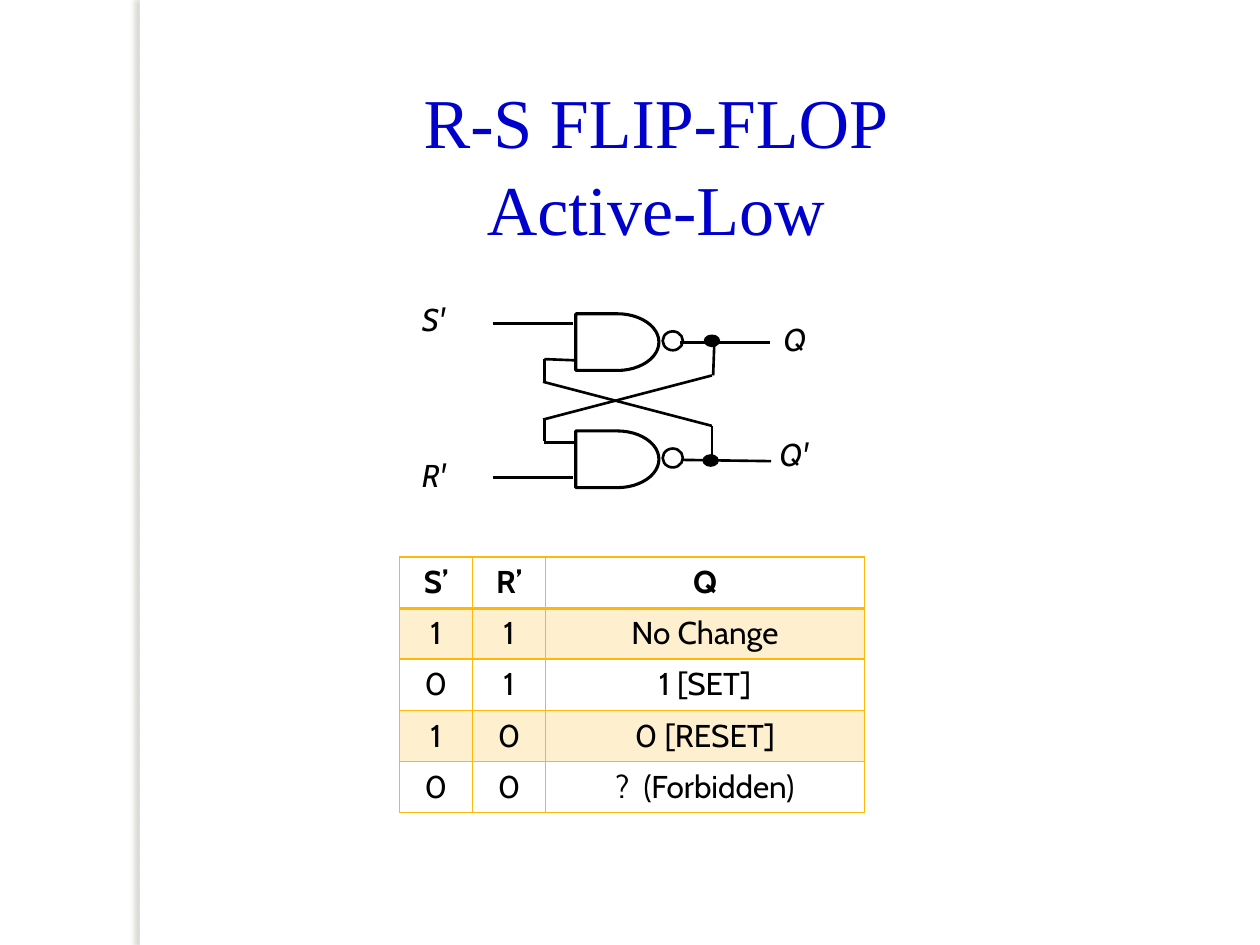
from typing import NamedTuple

from lxml import etree
from pptx import Presentation
from pptx.dml.color import RGBColor
from pptx.enum.shapes import MSO_CONNECTOR, MSO_SHAPE
from pptx.enum.text import MSO_ANCHOR, PP_ALIGN
from pptx.oxml.ns import qn
from pptx.util import Inches, Pt

LINE = MSO_CONNECTOR.STRAIGHT
RECT, OVAL, GATE = MSO_SHAPE.RECTANGLE, MSO_SHAPE.OVAL, MSO_SHAPE.FLOWCHART_DELAY
MID, LOW = PP_ALIGN.CENTER, MSO_ANCHOR.BOTTOM
TALL = 750
WIDE = 1000
CELL = Inches(10) // WIDE
INK = {"black": "000000", "white": "FFFFFF", "blue": "0000CC",
       "gold": "FEB80A", "shade": "736F63"}
SANS, SERIF = "Cabin", "Times New Roman"


class Wire(NamedTuple):
    x1: int
    y1: int
    x2: int
    y2: int


class Part(NamedTuple):
    kind: int
    left: int
    top: int
    wide: int
    tall: int
    line: float = 0
    fill: str = ""


class Label(NamedTuple):
    text: str
    left: int
    top: int
    wide: int


WIRES = [
    Wire(391, 257, 455, 257), Wire(391, 379, 455, 379),
    Wire(432, 285, 457, 286), Wire(432, 351, 457, 351),
    Wire(432, 285, 432, 304), Wire(432, 332, 432, 350),
    Wire(540, 272, 611, 272), Wire(542, 365, 612, 366),
    Wire(565, 338, 565, 367), Wire(567, 271, 566, 298),
    Wire(431, 303, 565, 338), Wire(565, 298, 431, 333),
]
DOTS = [Part(OVAL, 558, 361, 12, 9, 0.75, "black"),
        Part(OVAL, 559, 266, 12, 9, 0.75, "black")]
LABELS = [Label("S'", 325, 233, 70), Label("R'", 325, 357, 71),
          Label("Q", 612, 249, 59), Label("Q'", 609, 340, 74)]
GATES = [249, 342]
ROWS = [("S’", "R’", "Q"), ("1", "1", "No Change"), ("0", "1", "1 [SET]"),
        ("1", "0", "0 [RESET]"), ("0", "0", "?  (Forbidden)")]
COLS = [58, 58, 253]
STEP = 40.6


def size(*cells: float) -> list[int]:
    return [round(n * CELL) for n in cells]


def tint(name: str) -> RGBColor:
    return RGBColor.from_string(INK[name])


def style(para, face: str, points: int, ink: str, bold=False, slant=False) -> None:
    for run in para.runs:
        font = run.font
        font.name, font.size = face, Pt(points)
        font.bold, font.italic = bold, slant
        font.color.rgb = tint(ink)


def draw_wire(slide, wire: Wire) -> None:
    link = slide.shapes.add_connector(LINE, *size(*wire))
    link.line.color.rgb = tint("black")
    link.line.width = Pt(1.5)
    etree.SubElement(link._element.spPr, qn("a:effectLst"))


def draw_part(slide, part: Part):
    shape = slide.shapes.add_shape(part.kind, *size(*part[1:5]))
    shape.shadow.inherit = False
    if part.fill:
        shape.fill.solid()
        shape.fill.fore_color.rgb = tint(part.fill)
    else:
        shape.fill.background()
    if part.line:
        shape.line.color.rgb = tint("black")
        shape.line.width = Pt(part.line)
    else:
        shape.line.fill.background()
    return shape


def draw_strip(slide) -> None:
    strip = draw_part(slide, Part(RECT, 111, 0, 8, TALL, fill="white"))
    glow = etree.SubElement(
        strip._element.spPr.find(qn("a:effectLst")), qn("a:outerShdw"),
        blurRad=str(Pt(3)), dist=str(Pt(3)), dir="10800000",
        algn="ctr", rotWithShape="0")
    hue = etree.SubElement(glow, qn("a:srgbClr"), val=INK["shade"])
    etree.SubElement(hue, qn("a:alpha"), val="25000")


def draw_title(slide) -> None:
    frame = slide.shapes.add_textbox(*size(324, 58, 393, 145)).text_frame
    frame.word_wrap = False
    frame.vertical_anchor = LOW
    frame.text = "R-S FLIP-FLOP\nActive-Low"
    for para in frame.paragraphs:
        para.alignment = MID
        para.line_spacing = 1.04
        style(para, SERIF, 40, "blue")


def draw_label(slide, label: Label) -> None:
    box = slide.shapes.add_textbox(*size(label.left, label.top, label.wide, 60))
    frame = box.text_frame
    frame.word_wrap = True
    frame.text = label.text
    style(frame.paragraphs[0], SANS, 18, "black", slant=True)


def draw_edges(cell, row: int) -> None:
    props = cell._tc.get_or_add_tcPr()
    thick = {"lnT": row == 1, "lnB": row == 0}
    for spot, side in enumerate(("lnL", "lnR", "lnT", "lnB")):
        width = Pt(2 if thick.get(side) else 1)
        edge = etree.Element(qn(f"a:{side}"), w=str(width))
        fill = etree.SubElement(edge, qn("a:solidFill"))
        etree.SubElement(fill, qn("a:srgbClr"), val=INK["gold"])
        props.insert(spot, edge)


def draw_cell(cell, text: str, row: int) -> None:
    cell.text = text
    para = cell.text_frame.paragraphs[0]
    para.alignment = MID
    style(para, SANS, 18, "black", bold=row == 0)
    if row % 2:
        cell.fill.solid()
        cell.fill.fore_color.rgb = tint("gold")
        hue = cell._tc.tcPr.find(".//" + qn("a:srgbClr"))
        etree.SubElement(hue, qn("a:alpha"), val="20000")
    else:
        cell.fill.background()
    draw_edges(cell, row)


def draw_table(slide) -> None:
    area = size(317, 442, sum(COLS), STEP * len(ROWS))
    table = slide.shapes.add_table(len(ROWS), len(COLS), *area).table
    table.horz_banding = False
    table.first_row = False
    for col, wide in zip(table.columns, COLS):
        col.width = wide * CELL
    for row, texts in enumerate(ROWS):
        table.rows[row].height = round(STEP * CELL)
        for col, text in enumerate(texts):
            draw_cell(table.cell(row, col), text, row)


def main() -> None:
    deck = Presentation()
    deck.slide_width, deck.slide_height = size(WIDE, TALL)
    slide = deck.slides.add_slide(deck.slide_layouts[6])
    draw_strip(slide)
    draw_title(slide)
    for wire in WIRES:
        draw_wire(slide, wire)
    for dot in DOTS:
        draw_part(slide, dot)
    for label in LABELS:
        draw_label(slide, label)
    for top in GATES:
        draw_part(slide, Part(OVAL, 526, top + 14, 16, 15, 1.5))
        draw_part(slide, Part(GATE, 457, top, 66, 45, 1.75))
    draw_table(slide)
    deck.save("out.pptx")


if __name__ == "__main__":
    main()
